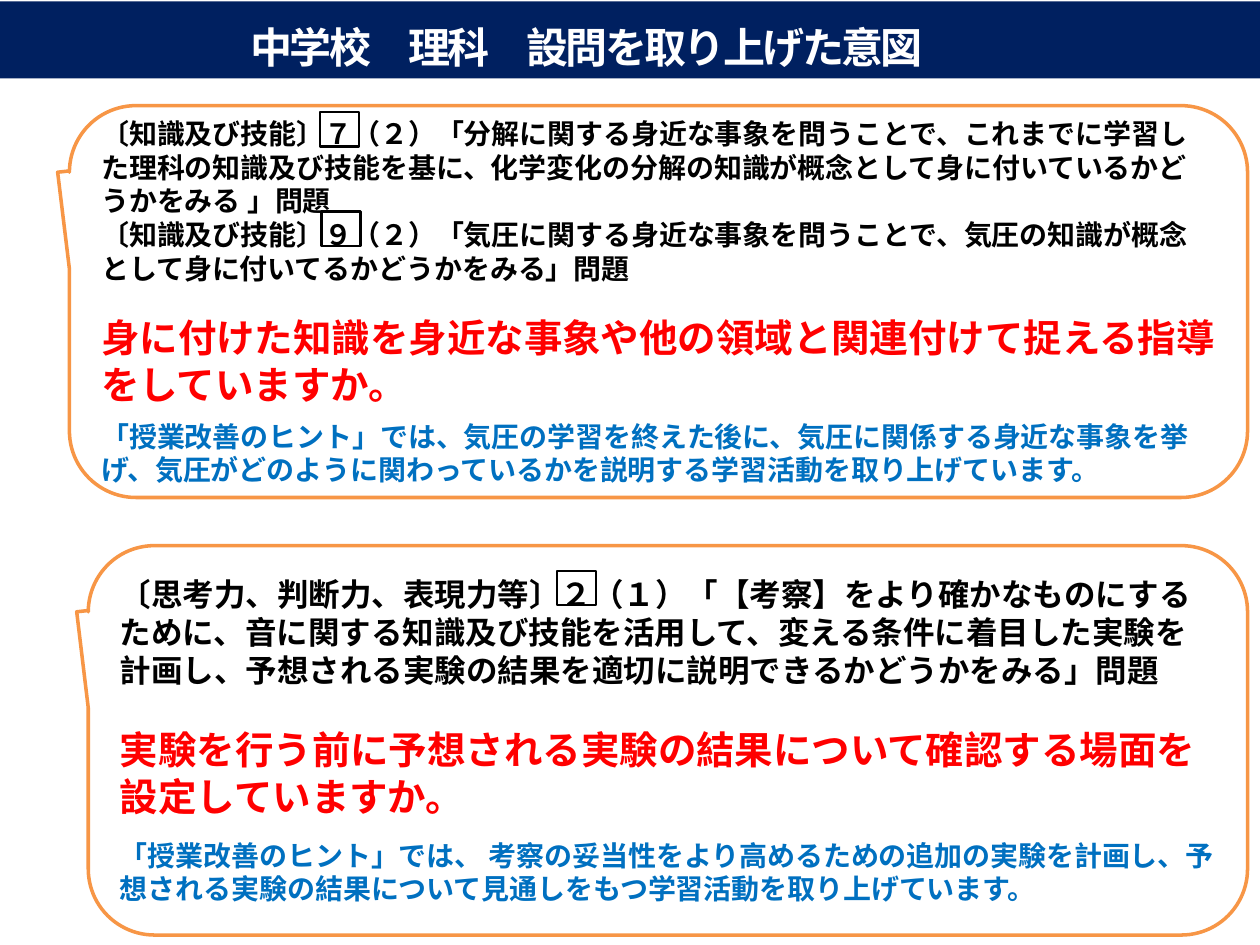
from lxml.etree import SubElement
from pptx import Presentation
from pptx.dml.color import RGBColor
from pptx.enum.shapes import MSO_SHAPE as Shape
from pptx.enum.text import MSO_ANCHOR as Anchor, PP_ALIGN as Align
from pptx.oxml.ns import qn
from pptx.util import Cm, Pt

FONT = "Noto Sans CJK JP"
COLORS = {"navy": "002060", "white": "FFFFFF", "orange": "F79646",
          "black": "000000", "red": "FF0000", "blue": "0070C0"}
LINE_PITCH = 1.2


def color(name):
    """Return the named colour."""
    return RGBColor.from_string(COLORS[name])


def write(paragraph, text, size, ink, align=Align.LEFT, before=0, tracking=None):
    """Write one bold paragraph in the slide font."""
    paragraph.alignment = align
    paragraph.space_before = Pt(before)
    paragraph.space_after = Pt(0)
    paragraph.line_spacing = Pt(size * LINE_PITCH)
    run = paragraph.add_run()
    run.text = text
    run.font.size = Pt(size)
    run.font.bold = True
    run.font.name = FONT
    run.font.color.rgb = color(ink)
    properties = run.font._element
    SubElement(properties, qn("a:ea")).set("typeface", FONT)
    if tracking is not None:
        properties.set("spc", str(tracking))


def place(shape, left, top, width, height):
    """Move and size a shape in centimetres."""
    shape.left, shape.top = Cm(left), Cm(top)
    shape.width, shape.height = Cm(width), Cm(height)


def add_title(slide, left, top, width, height):
    """Format the title placeholder as a banner."""
    title = slide.shapes.title
    place(title, left, top, width, height)
    title.fill.solid()
    title.fill.fore_color.rgb = color("navy")
    frame = title.text_frame
    frame.word_wrap = True
    frame.vertical_anchor = Anchor.MIDDLE
    frame.margin_left, frame.margin_right = Cm(0.25), Cm(1.95)
    frame.margin_top, frame.margin_bottom = Cm(0.4), Cm(0.13)
    write(frame.paragraphs[0], "中学校　理科　設問を取り上げた意図", 24, "white",
          align=Align.CENTER, tracking=-150)


def add_outlined(slide, kind, left, top, width, height, line, weight):
    """Add an unfilled shape with an outline."""
    shape = slide.shapes.add_shape(kind, Cm(left), Cm(top), Cm(width), Cm(height))
    shape.shadow.inherit = False
    shape.fill.background()
    shape.line.color.rgb = color(line)
    shape.line.width = Pt(weight)
    return shape


def add_callout(slide, left, top, width, height, paragraphs, number_boxes):
    """Add a speech bubble with its text and the frames around question numbers."""
    bubble = add_outlined(slide, Shape.ROUNDED_RECTANGULAR_CALLOUT,
                          left, top, width, height, "orange", 2)
    bubble.fill.solid()
    bubble.fill.fore_color.rgb = color("white")
    for index, value in enumerate((-0.51, -0.33, 0.17)):
        bubble.adjustments[index] = value
    frame = bubble.text_frame
    frame.word_wrap = True
    frame.vertical_anchor = Anchor.MIDDLE
    for index, (text, size, ink, before) in enumerate(paragraphs):
        paragraph = frame.add_paragraph() if index else frame.paragraphs[0]
        write(paragraph, text, size, ink, before=before)
    for x, y in number_boxes:
        add_outlined(slide, Shape.RECTANGLE, left + x, top + y, 0.79, 0.69, "black", 1.5)


def main():
    """Build the slide and save it."""
    presentation = Presentation()
    presentation.slide_width, presentation.slide_height = Cm(25.4), Cm(19.05)
    slide = presentation.slides.add_slide(presentation.slide_layouts[5])
    add_title(slide, -0.05, 0.03, 25.45, 1.55)
    add_callout(slide, 1.4, 2.13, 23.75, 7.9, [
        ("〔知識及び技能〕７（２）「分解に関する身近な事象を問うことで、これまでに学習した理科の"
         "知識及び技能を基に、化学変化の分解の知識が概念として身に付いているかどうかをみる 」問題",
         16, "black", 0),
        ("〔知識及び技能〕９（２）「気圧に関する身近な事象を問うことで、気圧の知識が概念として"
         "身に付いてるかどうかをみる」問題", 16, "black", 0),
        ("身に付けた知識を身近な事象や他の領域と関連付けて捉える指導をしていますか。", 22, "red", 17),
        ("「授業改善のヒント」では、気圧の学習を終えた後に、気圧に関係する身近な事象を挙げ、"
         "気圧がどのように関わっているかを説明する学習活動を取り上げています。", 16, "blue", 7),
    ], [(5.05, 0.13), (5.08, 2.14)])
    add_callout(slide, 1.78, 11, 23.37, 7.85, [
        ("〔思考力、判断力、表現力等〕２（１）「【考察】をより確かなものにするために、音に関する"
         "知識及び技能を活用して、変える条件に着目した実験を計画し、予想される実験の結果を適切に"
         "説明できるかどうかをみる」問題", 18, "black", 0),
        ("実験を行う前に予想される実験の結果について確認する場面を設定していますか。", 22, "red", 21.5),
        ("「授業改善のヒント」では、 考察の妥当性をより高めるための追加の実験を計画し、"
         "予想される実験の結果について見通しをもつ学習活動を取り上げています。", 16, "blue", 11),
    ], [(9.45, 0.51)])
    presentation.save("out.pptx")


if __name__ == "__main__":
    main()
